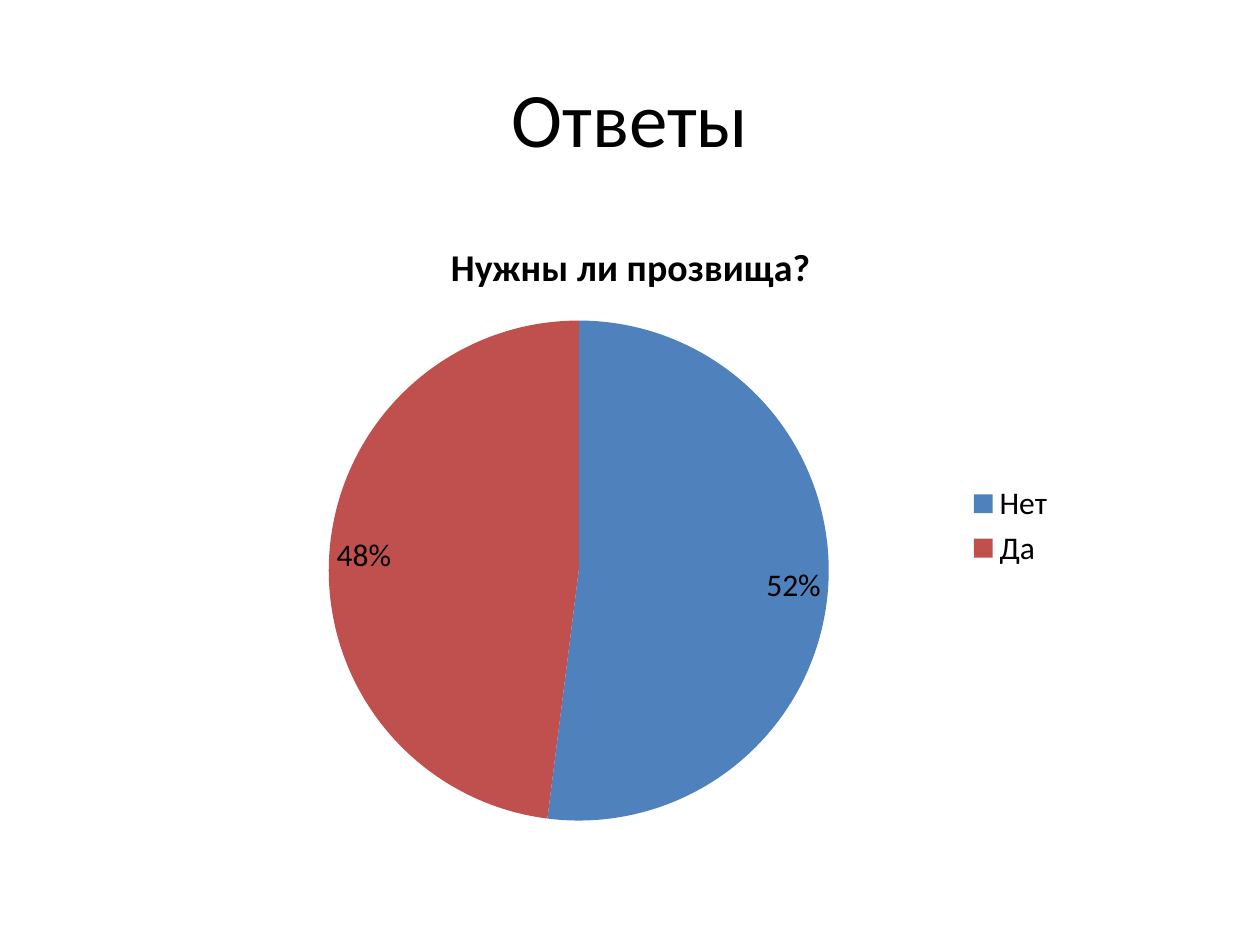
from pptx import Presentation
from pptx.chart.data import CategoryChartData
from pptx.dml.color import RGBColor
from pptx.enum.chart import XL_CHART_TYPE, XL_LABEL_POSITION, XL_LEGEND_POSITION
from pptx.enum.text import MSO_ANCHOR, PP_ALIGN
from pptx.util import Emu, Pt

HEADING = "Ответы"
QUESTION = "Нужны ли прозвища?"
ANSWERS = [("Нет", 52, "4F81BD"), ("Да", 48, "C0504D")]

SLIDE_SIZE = (1260, 945)
HEADING_BOX = (63, 38, 1134, 157)
PIE_BOX = (194, 214, 874, 624)
FONT = "Calibri"
BLACK = "000000"


def px(length):
    return Emu(round(length * 914400 / 126))


def color(hex_value):
    return RGBColor.from_string(hex_value)


def style(font, size, bold=False):
    font.name = FONT
    font.size = Pt(size)
    font.bold = bold
    font.color.rgb = color(BLACK)


def write(frame, text, size, bold=False, align=PP_ALIGN.CENTER):
    paragraph = frame.paragraphs[0]
    paragraph.alignment = align
    run = paragraph.add_run()
    run.text = text
    style(run.font, size, bold)


def add_heading(slide):
    frame = slide.shapes.add_textbox(*map(px, HEADING_BOX)).text_frame
    frame.word_wrap = True
    frame.vertical_anchor = MSO_ANCHOR.MIDDLE
    write(frame, HEADING, size=44)


def add_pie(slide):
    names, shares, fills = zip(*ANSWERS)
    votes = CategoryChartData()
    votes.categories = names
    votes.add_series(QUESTION, shares)
    pie = slide.shapes.add_chart(XL_CHART_TYPE.PIE, *map(px, PIE_BOX), votes).chart
    style(pie.font, 18)

    pie.has_title = True
    pie.chart_title.include_in_layout = False
    write(pie.chart_title.text_frame, QUESTION, size=21.6, bold=True)

    pie.has_legend = True
    pie.legend.position = XL_LEGEND_POSITION.RIGHT
    pie.legend.include_in_layout = False
    style(pie.legend.font, 18)

    plot = pie.plots[0]
    plot.vary_by_categories = True
    for index, fill in enumerate(fills):
        slice_fill = plot.series[0].points[index].format.fill
        slice_fill.solid()
        slice_fill.fore_color.rgb = color(fill)

    plot.has_data_labels = True
    labels = plot.data_labels
    labels.show_value = False
    labels.show_percentage = True
    labels.number_format = "0%"
    labels.number_format_is_linked = False
    labels.position = XL_LABEL_POSITION.INSIDE_END
    style(labels.font, 18)


def main():
    deck = Presentation()
    deck.slide_width, deck.slide_height = map(px, SLIDE_SIZE)
    slide = deck.slides.add_slide(deck.slide_layouts[6])
    add_heading(slide)
    add_pie(slide)
    deck.save("out.pptx")


if __name__ == "__main__":
    main()
